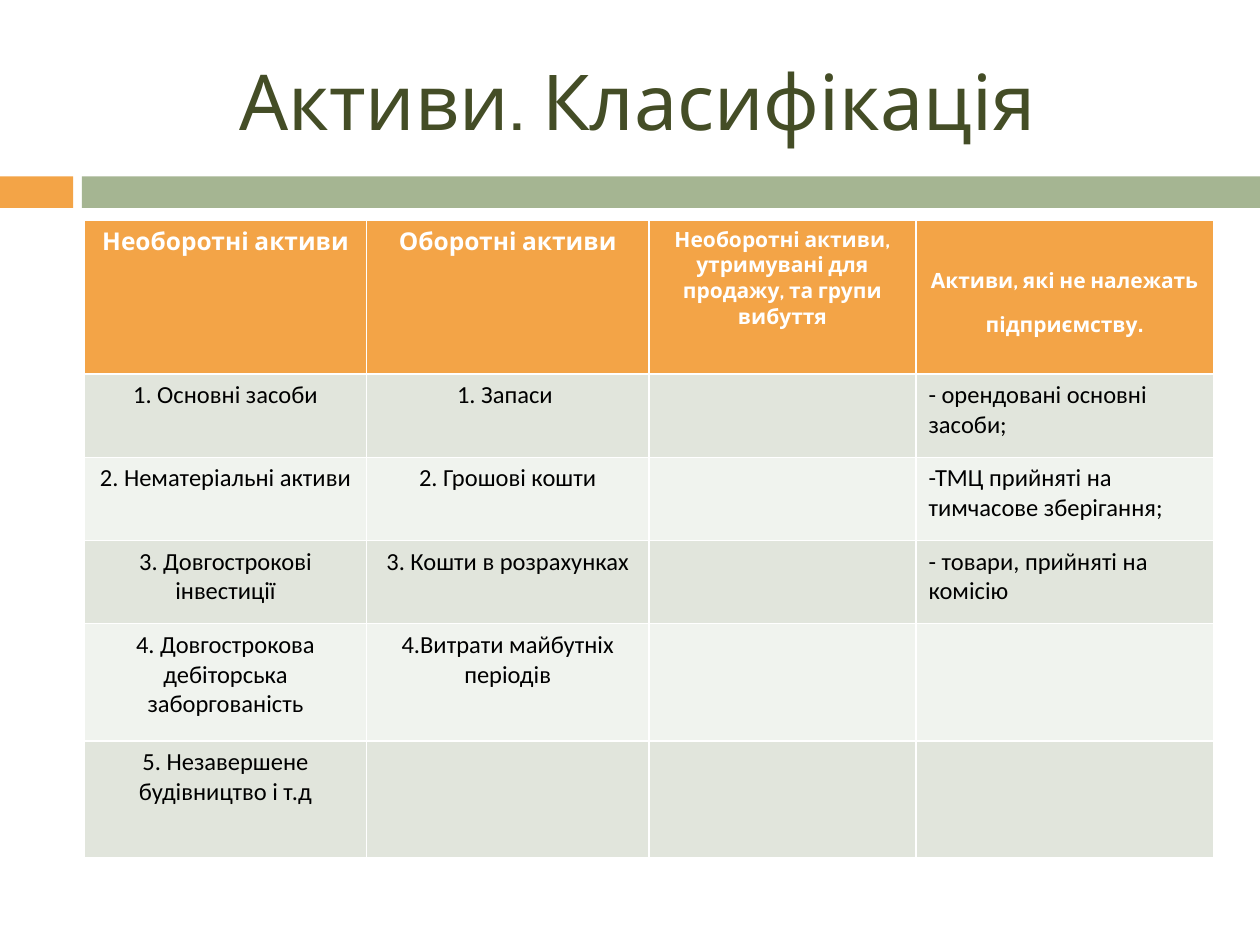
from dataclasses import dataclass

from pptx import Presentation
from pptx.dml.color import RGBColor as Rgb
from pptx.enum.shapes import MSO_SHAPE as Preset
from pptx.enum.text import MSO_ANCHOR as Anchor, PP_ALIGN as Align
from pptx.util import Inches, Pt


@dataclass(frozen=True)
class Theme:
    orange: str = "F3A447"
    green: str = "A5B592"
    title: str = "444D26"
    white: str = "FFFFFF"
    black: str = "000000"
    bands: tuple = ("E1E5DC", "F0F3EE")
    heading_font: str = "Cabin"
    body_font: str = "Calibri"
    title_size: int = 44
    text_size: int = 14
    small_size: int = 12


theme = Theme()


def add_run(paragraph, text, font, size, color, bold=False):
    run = paragraph.add_run()
    run.text = text
    run.font.name = font
    run.font.size = Pt(size)
    run.font.bold = bold
    run.font.color.rgb = Rgb.from_string(color)


def paint(target, color):
    target.fill.solid()
    target.fill.fore_color.rgb = Rgb.from_string(color)


presentation = Presentation()
presentation.slide_width, presentation.slide_height = Inches(10), Inches(7.5)
slide = presentation.slides.add_slide(presentation.slide_layouts[6])
margin = Inches(0.67)

# Divider bars
bar_top, bar_height = Inches(1.4), Inches(0.25)
green_left = Inches(0.65)
for left, right, color in (
    (0, Inches(0.58), theme.orange),
    (green_left, presentation.slide_width, theme.green),
):
    bar = slide.shapes.add_shape(Preset.RECTANGLE, left, bar_top, right - left, bar_height)
    bar.shadow.inherit = False
    bar.line.fill.background()
    paint(bar, color)

# Title; its trailing space belongs to the centred line
title = slide.shapes.add_textbox(margin, Inches(0.25), Inches(8.92), Inches(1.08))
title.text_frame.word_wrap = True
title.text_frame.vertical_anchor = Anchor.MIDDLE
paragraph = title.text_frame.paragraphs[0]
paragraph.alignment = Align.CENTER
add_run(paragraph, "Активи. Класифікація ", theme.heading_font, theme.title_size, theme.title)

# Table grid
column_widths = (2.24, 2.24, 2.12, 2.36)
row_heights = (1.22, 0.66, 0.66, 0.66, 0.93, 0.93)
table = slide.shapes.add_table(
    len(row_heights), len(column_widths), margin, Inches(1.75),
    Inches(sum(column_widths)), Inches(sum(row_heights)),
).table
for column, width in zip(table.columns, column_widths):
    column.width = Inches(width)
for row, height in zip(table.rows, row_heights):
    row.height = Inches(height)

# Header row: each cell is a list of (text, size) runs
headers = (
    [("Необоротні активи", theme.text_size)],
    [("Оборотні активи", theme.text_size)],
    [("Необоротні активи, утримувані для продажу, та групи вибуття", theme.small_size)],
    [("Активи, які не належать підприємству", theme.small_size), (".", theme.text_size)],
)
for column, runs in enumerate(headers):
    cell = table.cell(0, column)
    paint(cell, theme.orange)
    paragraph = cell.text_frame.paragraphs[0]
    paragraph.alignment = Align.CENTER
    for text, size in runs:
        add_run(paragraph, text, theme.heading_font, size, theme.white, bold=True)

# The last header sits in the middle with open line spacing
last_header = table.cell(0, len(headers) - 1)
last_header.vertical_anchor = Anchor.MIDDLE
last_header.margin_left = last_header.margin_right = Inches(0.07)
last_header.margin_top = last_header.margin_bottom = 0
last_header.text_frame.paragraphs[0].line_spacing = 1.5

# Body rows in alternating bands
body = (
    ("1. Основні засоби", "1. Запаси ", "", "- орендовані основні засоби;"),
    ("2. Нематеріальні активи", "2. Грошові кошти", "", "-ТМЦ прийняті на тимчасове зберігання;"),
    ("3. Довгострокові інвестиції", "3. Кошти в розрахунках", "", "- товари, прийняті на комісію"),
    ("4. Довгострокова дебіторська заборгованість", "4.Витрати майбутніх періодів", "", ""),
    ("5. Незавершене будівництво і т.д", "", "", ""),
)
alignments = (Align.CENTER, Align.CENTER, Align.CENTER, Align.LEFT)
for row, texts in enumerate(body, start=1):
    for column, text in enumerate(texts):
        cell = table.cell(row, column)
        paint(cell, theme.bands[(row - 1) % 2])
        if text:
            paragraph = cell.text_frame.paragraphs[0]
            paragraph.alignment = alignments[column]
            add_run(paragraph, text, theme.body_font, theme.text_size, theme.black)

presentation.save("out.pptx")
